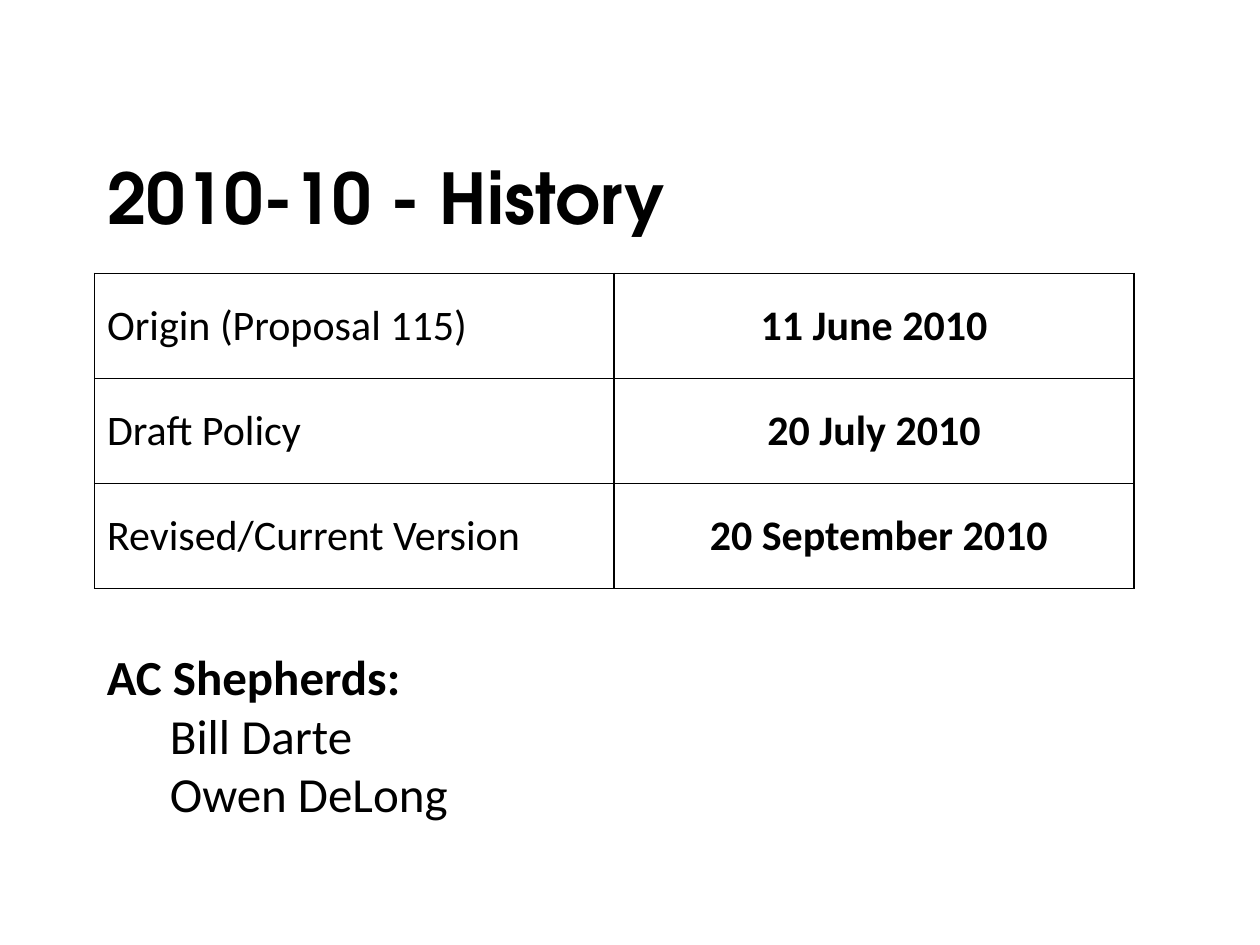
import pptx
import pptx.dml.color
import pptx.enum.text
import pptx.oxml
import pptx.oxml.ns
import pptx.util

Inches = pptx.util.Inches
ALIGN = pptx.enum.text.PP_ALIGN
ANCHOR = pptx.enum.text.MSO_ANCHOR

TITLE = "2010-10 - History"
HISTORY = [
    ("Origin (Proposal 115)", "11 June 2010"),
    ("Draft Policy", "20 July 2010"),
    ("Revised/Current Version", " 20 September 2010"),
]
SHEPHERDS_HEADING = "AC Shepherds:"
SHEPHERDS = ["Bill Darte", "Owen DeLong"]

THEME = {
    "ink": "000000",
    "paper": "FFFFFF",
    "border": 1,
    "title": {"name": "TeX Gyre Adventor", "size": pptx.util.Pt(40), "bold": True},
    "event": {"name": "Calibri", "size": pptx.util.Pt(24), "bold": False},
    "date": {"name": "Calibri", "size": pptx.util.Pt(24), "bold": True},
    "heading": {"name": "Calibri", "size": pptx.util.Pt(28), "bold": True},
    "shepherd": {"name": "Calibri", "size": pptx.util.Pt(28), "bold": False},
}
LEFT = 0.75
COLUMN_WIDTH, ROW_HEIGHT = 4.125, 2.5 / 3
NAME_INDENT = 0.5


def write(paragraph, text, role, align=ALIGN.LEFT):
    run = paragraph.add_run()
    run.text = text
    paragraph.alignment = align
    for attribute, value in THEME[role].items():
        setattr(run.font, attribute, value)
    run.font.color.rgb = pptx.dml.color.RGBColor.from_string(THEME["ink"])


def draw_borders(cell):
    properties = cell._tc.get_or_add_tcPr()
    for position, side in enumerate(("lnL", "lnR", "lnT", "lnB")):
        properties.insert(position, pptx.oxml.parse_xml(
            f'<a:{side} {pptx.oxml.ns.nsdecls("a")} w="{pptx.util.Pt(THEME["border"])}">'
            f'<a:solidFill><a:srgbClr val="{THEME["ink"]}"/></a:solidFill></a:{side}>'))


def add_title(slide):
    title = slide.shapes.title
    box = {"left": LEFT, "top": 1.17, "width": 9, "height": 0.78}
    for attribute, value in box.items():
        setattr(title, attribute, Inches(value))
    title.text_frame.vertical_anchor = ANCHOR.MIDDLE
    write(title.text_frame.paragraphs[0], TITLE, "title")


def add_history(slide):
    columns = len(HISTORY[0])
    table = slide.shapes.add_table(
        len(HISTORY), columns, Inches(LEFT), Inches(2.17),
        Inches(COLUMN_WIDTH * columns), Inches(ROW_HEIGHT * len(HISTORY))).table
    table.first_row = table.horz_banding = False
    styles = [("event", ALIGN.LEFT), ("date", ALIGN.CENTER)]
    for row, entry in enumerate(HISTORY):
        for column, (text, (role, align)) in enumerate(zip(entry, styles)):
            cell = table.cell(row, column)
            cell.fill.solid()
            cell.fill.fore_color.rgb = pptx.dml.color.RGBColor.from_string(THEME["paper"])
            cell.vertical_anchor = ANCHOR.MIDDLE
            write(cell.text_frame.paragraphs[0], text, role, align)
            draw_borders(cell)


def add_shepherds(slide):
    frame = slide.shapes.add_textbox(
        Inches(LEFT), Inches(5.08), Inches(4.08), Inches(1.51)).text_frame
    frame.word_wrap = True
    frame.auto_size = pptx.enum.text.MSO_AUTO_SIZE.SHAPE_TO_FIT_TEXT
    write(frame.paragraphs[0], SHEPHERDS_HEADING, "heading")
    for name in SHEPHERDS:
        paragraph = frame.add_paragraph()
        paragraph._p.get_or_add_pPr().set("marL", str(Inches(NAME_INDENT)))
        write(paragraph, name, "shepherd")


def main():
    presentation = pptx.Presentation()
    presentation.slide_width = Inches(10)
    presentation.slide_height = Inches(7.5)
    slide = presentation.slides.add_slide(
        presentation.slide_layouts.get_by_name("Title Only"))
    add_title(slide)
    add_history(slide)
    add_shepherds(slide)
    presentation.save("out.pptx")


if __name__ == "__main__":
    main()
